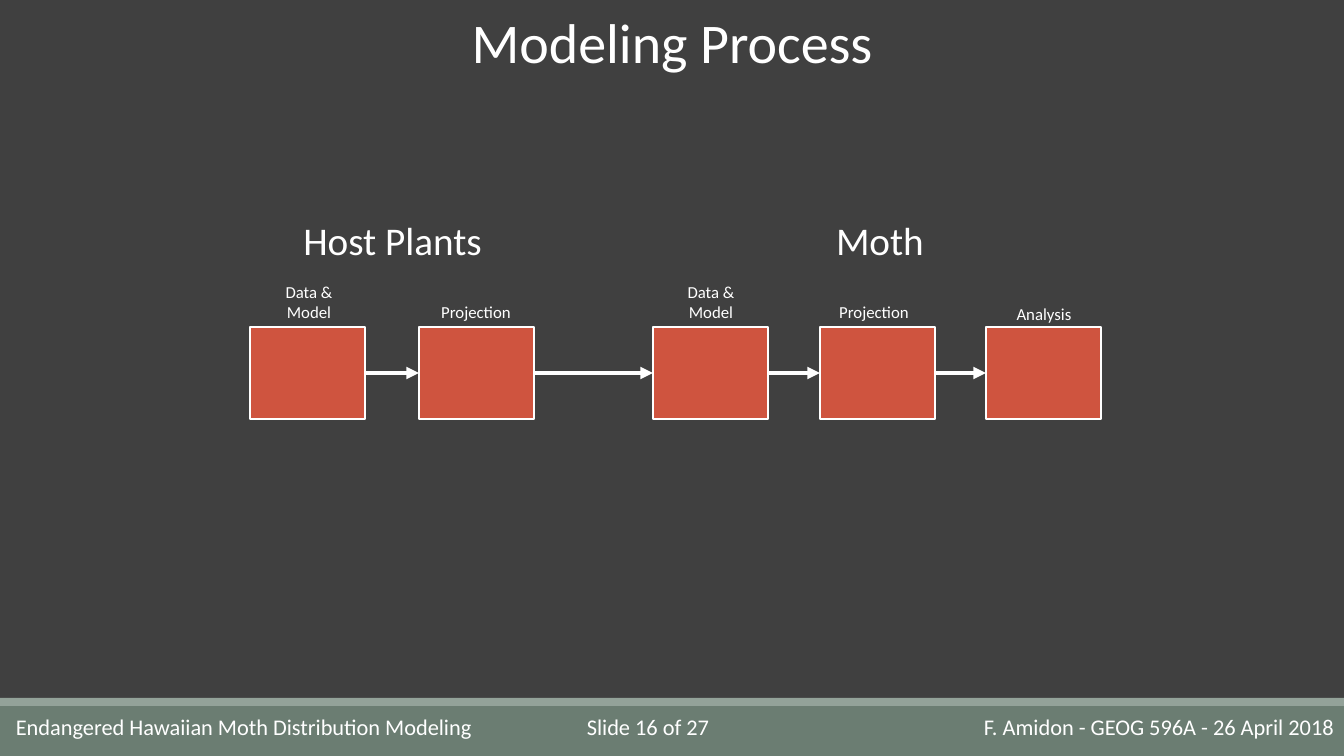
from dataclasses import dataclass
from itertools import pairwise

from lxml.etree import SubElement
from pptx import Presentation
from pptx.dml.color import RGBColor
from pptx.enum.shapes import MSO_CONNECTOR, MSO_SHAPE
from pptx.enum.text import MSO_ANCHOR, PP_ALIGN
from pptx.oxml.ns import qn
from pptx.util import Emu, Pt

EMU_PER_PX = 914400 / 100.8
PAGE_WIDTH, PAGE_HEIGHT = 1344, 756
STAGE_TOP, STAGE_WIDTH, STAGE_HEIGHT = 327, 115, 92
LABEL_WIDTH = 114
RIGHT_SIDE, LEFT_SIDE = 3, 1


@dataclass(frozen=True)
class Theme:
    font: str = "Calibri"
    background: str = "404040"
    text: str = "FFFFFF"
    stage: str = "CF543F"
    footer: str = "6B7D72"
    footer_edge: str = "93A299"
    title_size: int = 40
    heading_size: int = 28
    footer_size: int = 16
    label_size: int = 12
    outline: float = 1.25
    arrow: int = 3


@dataclass(frozen=True)
class Stage:
    label: str
    left: int
    label_left: int
    label_top: int
    label_height: int = 30


THEME = Theme()
STAGES = [
    Stage("Data & Model", 250, 252, 277, 50),
    Stage("Projection", 419, 419, 297),
    Stage("Data & Model", 653, 654, 277, 50),
    Stage("Projection", 820, 817, 297),
    Stage("Analysis", 986, 987, 299),
]


def px(length):
    return Emu(round(length * EMU_PER_PX))


def color(code):
    return RGBColor.from_string(code)


def write_text(frame, text, *, size, align=PP_ALIGN.CENTER, anchor=MSO_ANCHOR.TOP):
    frame.word_wrap = True
    frame.vertical_anchor = anchor
    para = frame.paragraphs[0]
    para.alignment = align
    span = para.add_run()
    span.text = text
    span.font.name = THEME.font
    span.font.size = Pt(size)
    span.font.color.rgb = color(THEME.text)


def add_title(page, text):
    title = page.shapes.title
    title.left, title.top, title.width, title.height = px(0), px(2), px(PAGE_WIDTH), px(78)
    write_text(title.text_frame, text, size=THEME.title_size, anchor=MSO_ANCHOR.MIDDLE)


def add_text(page, text, left, top, width, height, **text_format):
    box = page.shapes.add_textbox(px(left), px(top), px(width), px(height))
    write_text(box.text_frame, text, **text_format)


def add_rectangle(page, left, top, width, height, *, fill, outline=None):
    box = page.shapes.add_shape(
        MSO_SHAPE.RECTANGLE, px(left), px(top), px(width), px(height))
    box.shadow.inherit = False
    box.fill.solid()
    box.fill.fore_color.rgb = color(fill)
    if outline:
        box.line.color.rgb = color(outline)
        box.line.width = Pt(THEME.outline)
    else:
        box.line.fill.background()
    return box


def add_arrow(page, source, target):
    """Join the right side of source to the left side of target."""
    arrow = page.shapes.add_connector(MSO_CONNECTOR.STRAIGHT, 0, 0, 0, 0)
    arrow.begin_connect(source, RIGHT_SIDE)
    arrow.end_connect(target, LEFT_SIDE)
    arrow.line.color.rgb = color(THEME.text)
    arrow.line.width = Pt(THEME.arrow)
    SubElement(arrow.line._get_or_add_ln(), qn("a:tailEnd"), type="triangle")
    SubElement(arrow._element.spPr, qn("a:effectLst"))


def add_footer(page):
    add_rectangle(page, 0, 706, PAGE_WIDTH, 50, fill=THEME.footer)
    add_rectangle(page, 0, 698, PAGE_WIDTH, 8, fill=THEME.footer_edge)
    for text, left, width, align in [
        ("Endangered Hawaiian Moth Distribution Modeling", 6, 562, PP_ALIGN.LEFT),
        ("Slide 16 of 27", 561, 174, PP_ALIGN.CENTER),
        ("F. Amidon - GEOG 596A - 26 April 2018", 743, 601, PP_ALIGN.RIGHT),
    ]:
        add_text(page, text, left, 708, width, 37, size=THEME.footer_size, align=align)


def add_stage(page, stage):
    add_text(page, stage.label, stage.label_left, stage.label_top,
             LABEL_WIDTH, stage.label_height, size=THEME.label_size)
    return add_rectangle(page, stage.left, STAGE_TOP, STAGE_WIDTH, STAGE_HEIGHT,
                         fill=THEME.stage, outline=THEME.text)


def main():
    deck = Presentation()
    deck.slide_width, deck.slide_height = px(PAGE_WIDTH), px(PAGE_HEIGHT)
    page = deck.slides.add_slide(deck.slide_layouts.get_by_name("Title Only"))
    page.background.fill.solid()
    page.background.fill.fore_color.rgb = color(THEME.background)

    add_footer(page)
    add_title(page, "Modeling Process")
    for heading, left, width in [("Host Plants", 166, 453), ("Moth", 657, 446)]:
        add_text(page, heading, left, 211, width, 57, size=THEME.heading_size)

    boxes = [add_stage(page, stage) for stage in STAGES]
    for source, target in pairwise(boxes):
        add_arrow(page, source, target)

    deck.save("out.pptx")


if __name__ == "__main__":
    main()
